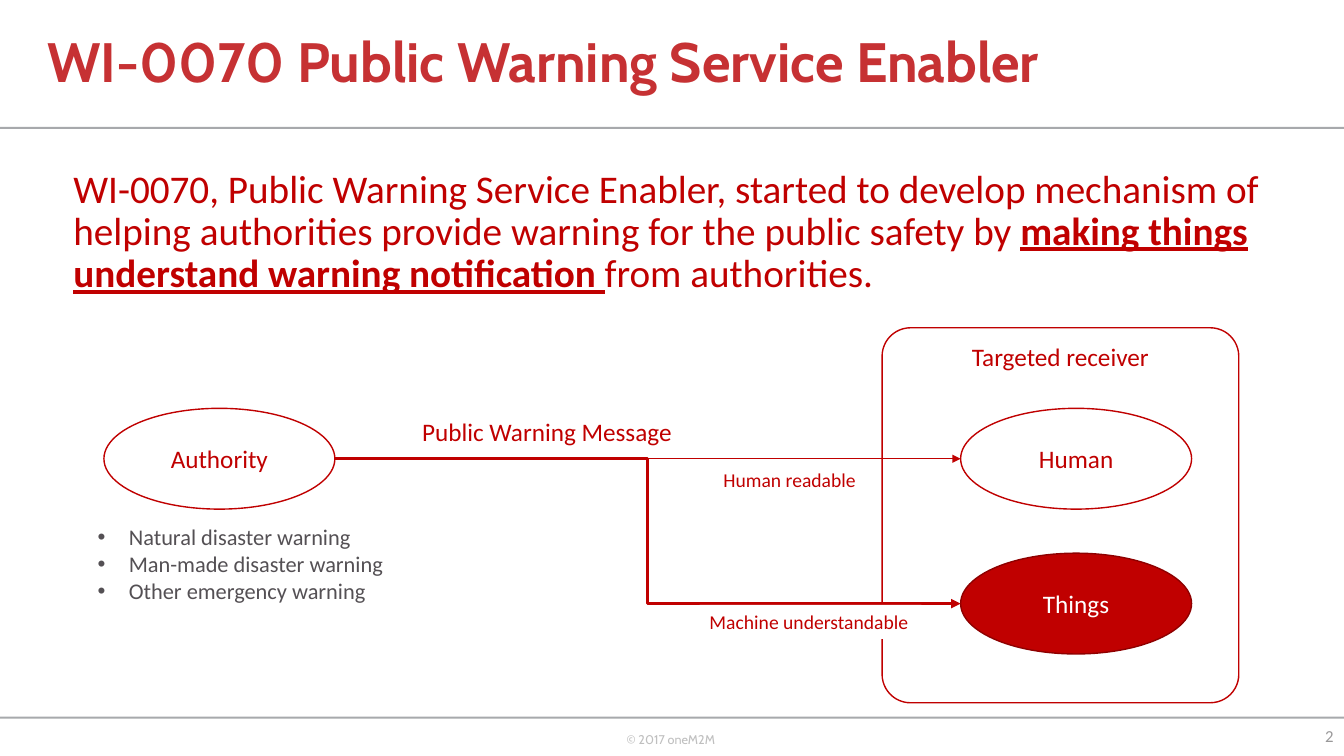
from lxml.etree import SubElement
from pptx import Presentation
from pptx.dml.color import RGBColor
from pptx.enum.shapes import MSO_CONNECTOR as CONNECTOR, MSO_SHAPE as SHAPE
from pptx.enum.text import MSO_ANCHOR as ANCHOR, PP_ALIGN as ALIGN
from pptx.oxml.ns import qn
from pptx.util import Cm, Pt

RED = RGBColor(0xC0, 0x00, 0x00)
DARK_RED = RGBColor(0x8E, 0x00, 0x00)
TITLE_RED = RGBColor(0xC6, 0x31, 0x33)
WHITE = RGBColor(0xFF, 0xFF, 0xFF)
RULE_GRAY = RGBColor(0xA7, 0xA9, 0xAC)
FOOTER_GRAY = RGBColor(0xBF, 0xBF, 0xBF)
NUMBER_GRAY = RGBColor(0x99, 0x98, 0x99)
TEXT_GRAY = RGBColor(0x54, 0x50, 0x54)

SLIDE_WIDTH, SLIDE_HEIGHT = 33.87, 19.05
OVAL_WIDTH, OVAL_HEIGHT = 5.82, 2.54
AUTHORITY_LEFT, RECEIVER_LEFT = 2.62, 24.21
HUMAN_TOP, THINGS_TOP = 10.29, 13.94


def write_text(paragraph, text, size=18, color=RED, font="Calibri",
               bold=False, underline=False, align=ALIGN.LEFT, spacing=None):
    paragraph.alignment = align
    if spacing:
        paragraph.line_spacing = spacing
    run = paragraph.add_run()
    run.text = text
    run.font.name = font
    run.font.size = Pt(size)
    run.font.bold = bold
    run.font.underline = underline
    run.font.color.rgb = color


def add_box(slide, box, anchor=ANCHOR.TOP, wrap=True):
    shape = slide.shapes.add_textbox(*map(Cm, box))
    frame = shape.text_frame
    frame.word_wrap = wrap
    frame.vertical_anchor = anchor
    return shape


def add_label(slide, text, box, anchor=ANCHOR.TOP, wrap=False, fill=None, **style):
    shape = add_box(slide, box, anchor, wrap)
    if fill is not None:
        shape.fill.solid()
        shape.fill.fore_color.rgb = fill
    write_text(shape.text_frame.paragraphs[0], text, **style)


def add_panel(slide, kind, box, fill=WHITE, line=None):
    shape = slide.shapes.add_shape(kind, *map(Cm, box))
    shape.shadow.inherit = False
    shape.fill.solid()
    shape.fill.fore_color.rgb = fill
    if line is None:
        shape.line.fill.background()
    else:
        shape.line.color.rgb = line
        shape.line.width = Pt(1)
    return shape


def add_oval(slide, text, left, top, fill=WHITE, line=RED, color=RED):
    oval = add_panel(slide, SHAPE.OVAL, (left, top, OVAL_WIDTH, OVAL_HEIGHT), fill, line)
    oval.text_frame.vertical_anchor = ANCHOR.MIDDLE
    write_text(oval.text_frame.paragraphs[0], text, color=color, align=ALIGN.CENTER)


def add_arrow(slide, kind, target_top, width):
    start = AUTHORITY_LEFT + OVAL_WIDTH, HUMAN_TOP + OVAL_HEIGHT / 2
    end = RECEIVER_LEFT, target_top + OVAL_HEIGHT / 2
    arrow = slide.shapes.add_connector(kind, *map(Cm, start + end))
    arrow.line.color.rgb = RED
    arrow.line.width = Pt(width)
    SubElement(arrow.line._get_or_add_ln(), qn("a:tailEnd"), type="triangle")
    SubElement(arrow._element.spPr, qn("a:effectLst"))


def add_bullets(slide, items, box, indent=0.79):
    frame = add_box(slide, box, wrap=False).text_frame
    for index, item in enumerate(items):
        paragraph = frame.add_paragraph() if index else frame.paragraphs[0]
        properties = paragraph._p.get_or_add_pPr()
        properties.set("marL", str(Cm(indent)))
        properties.set("indent", str(-Cm(indent)))
        SubElement(properties, qn("a:buFont"), typeface="Arial")
        SubElement(properties, qn("a:buChar"), char="•")
        write_text(paragraph, item, size=16, color=TEXT_GRAY)


def add_frame(slide):
    for top in (3.2, 18.06):
        add_panel(slide, SHAPE.RECTANGLE, (0, top, SLIDE_WIDTH, 0.05), RULE_GRAY)
    add_label(slide, "© 2017 oneM2M", (15.54, 18.31, 2.8, 1.02),
              size=9, color=FOOTER_GRAY, font="Cabin")
    add_label(slide, "WI-0070 Public Warning Service Enabler", (0.94, 0, 28.78, 3.25),
              anchor=ANCHOR.MIDDLE, wrap=True, size=39.6, color=TITLE_RED,
              font="Cabin", bold=True, spacing=0.9)
    add_label(slide, "2", (32.49, 18.03, 1.37, 1.02), anchor=ANCHOR.MIDDLE,
              wrap=True, size=12, color=NUMBER_GRAY, align=ALIGN.RIGHT)


def add_summary(slide):
    paragraph = add_box(slide, (1.6, 4.14, 30.68, 3.68)).text_frame.paragraphs[0]
    for text, strong in (
        ("WI-0070, Public Warning Service Enabler, started to develop mechanism of "
         "helping authorities provide warning for the public safety by ", False),
        ("making things understand warning notification ", True),
        ("from authorities.", False),
    ):
        write_text(paragraph, text, size=28, bold=strong, underline=strong, spacing=0.9)


def add_diagram(slide):
    receiver = add_panel(slide, SHAPE.ROUNDED_RECTANGLE, (22.23, 8.26, 8.99, 9.45), line=RED)
    receiver.adjustments[0] = 0.08
    receiver.text_frame.vertical_anchor = ANCHOR.TOP
    write_text(receiver.text_frame.paragraphs[0], "Targeted receiver", align=ALIGN.CENTER)

    add_oval(slide, "Authority", AUTHORITY_LEFT, HUMAN_TOP)
    add_arrow(slide, CONNECTOR.STRAIGHT, HUMAN_TOP, 0.5)
    add_oval(slide, "Human", RECEIVER_LEFT, HUMAN_TOP)
    add_oval(slide, "Things", RECEIVER_LEFT, THINGS_TOP, RED, DARK_RED, WHITE)
    add_arrow(slide, CONNECTOR.ELBOW, THINGS_TOP, 2.25)

    add_bullets(slide, ("Natural disaster warning", "Man-made disaster warning",
                        "Other emergency warning"), (2.21, 13.06, 7.8, 2.31))
    add_label(slide, "Public Warning Message", (10.39, 10.36, 6.88, 1.02))
    add_label(slide, "Human readable", (17.98, 11.66, 3.89, 0.86), fill=WHITE, size=14)
    add_label(slide, "Machine understandable", (17.63, 15.24, 5.59, 0.86), fill=WHITE, size=14)


def main():
    presentation = Presentation()
    presentation.slide_width = Cm(SLIDE_WIDTH)
    presentation.slide_height = Cm(SLIDE_HEIGHT)
    slide = presentation.slides.add_slide(presentation.slide_layouts[6])
    add_frame(slide)
    add_summary(slide)
    add_diagram(slide)
    presentation.save("out.pptx")


if __name__ == "__main__":
    main()
